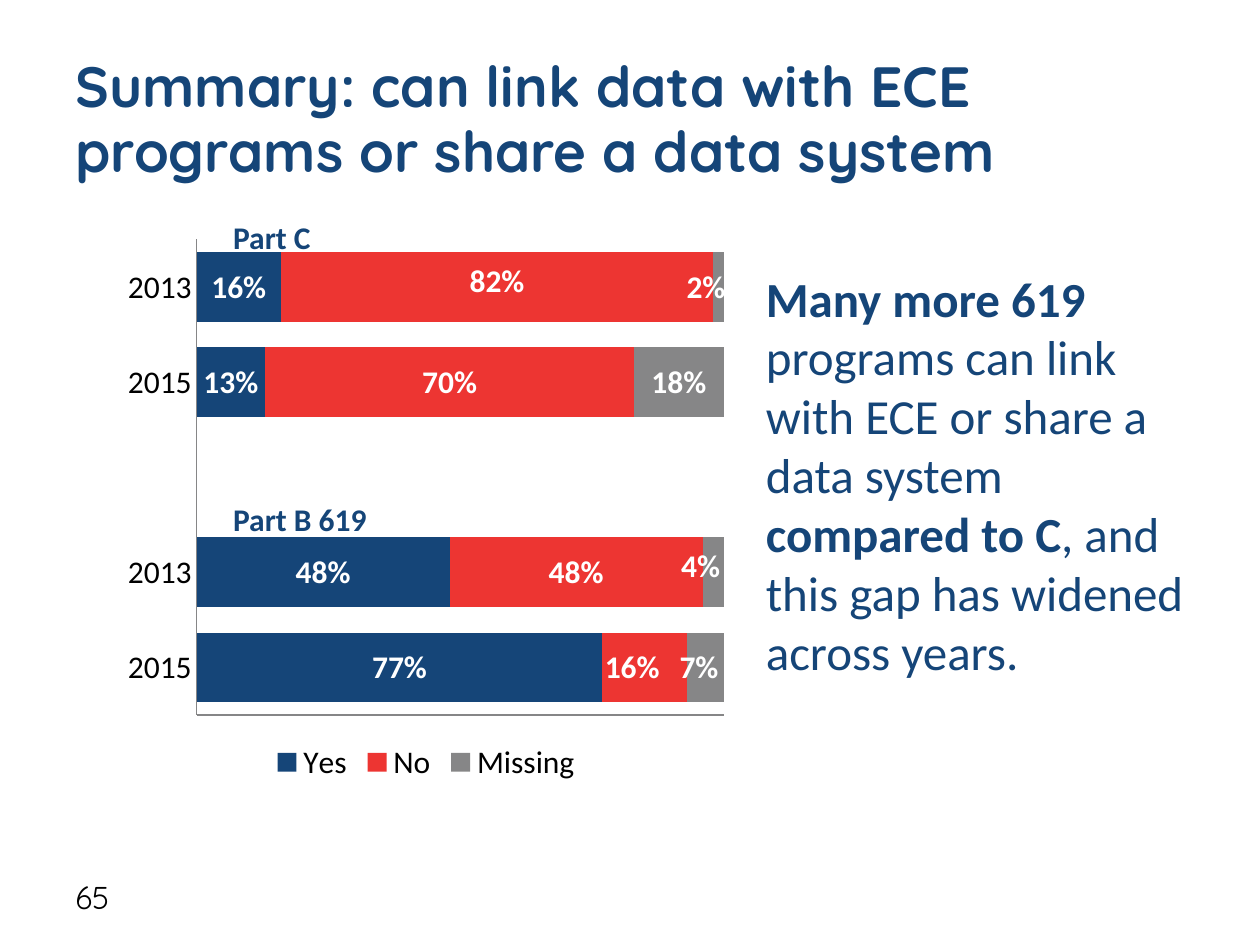
from pptx import Presentation
from pptx.chart.data import CategoryChartData
from pptx.dml.color import RGBColor
from pptx.enum.chart import XL_CHART_TYPE as ChartType, XL_LEGEND_POSITION as LegendPosition
from pptx.enum.chart import XL_TICK_LABEL_POSITION as TickLabels, XL_TICK_MARK as TickMark
from pptx.enum.text import MSO_ANCHOR as Anchor
from pptx.oxml import parse_xml
from pptx.oxml.ns import nsdecls
from pptx.util import Cm, Pt

NAVY = RGBColor(0x15, 0x45, 0x78)
RED = RGBColor(0xED, 0x35, 0x32)
GRAY = RGBColor(0x86, 0x86, 0x87)
WHITE = RGBColor(0xFF, 0xFF, 0xFF)
BLACK = RGBColor(0, 0, 0)


def add_text(box, runs, size, font_name="Calibri", color=NAVY, anchor=Anchor.TOP, wrap=True, spacing=None):
    shape = slide.shapes.add_textbox(*[Cm(length) for length in box])
    frame = shape.text_frame
    frame.word_wrap = wrap
    frame.vertical_anchor = anchor
    paragraph = frame.paragraphs[0]
    paragraph.line_spacing = spacing
    for text, bold in runs:
        run = paragraph.add_run()
        run.text = text
        run.font.name = font_name
        run.font.size = Pt(size)
        run.font.bold = bold
        run.font.color.rgb = color


def manual_layout(x, y, size=""):
    return parse_xml(
        f'<c:layout {nsdecls("c")}><c:manualLayout>{size and "<c:layoutTarget val=%sinner%s/>" % (chr(34), chr(34))}'
        f'{size and "<c:xMode val=%sedge%s/><c:yMode val=%sedge%s/>" % ((chr(34),) * 4)}'
        f'<c:x val="{x}"/><c:y val="{y}"/>{size}</c:manualLayout></c:layout>')


presentation = Presentation()
presentation.slide_width = Cm(25.4)
presentation.slide_height = Cm(19.05)
slide = presentation.slides.add_slide(presentation.slide_layouts[6])

add_text((1.27, 17.58, 5.92, 1.02), [("65", False)], 18, "Quicksand", BLACK, Anchor.MIDDLE)
add_text((1.27, 0.84, 22.86, 3.18), [("Summary: can link data with ECE programs or share a data system", True)],
         32.4, "Quicksand", anchor=Anchor.MIDDLE, spacing=0.95)
add_text((15.19, 5.28, 9.09, 8.64), [
    ("Many more 619 ", True),
    ("programs can link with ECE or share a data system ", False),
    ("compared to C", True),
    (", and this gap has widened across years.", False),
], 28)

chart_data = CategoryChartData(number_format="0%")
chart_data.categories = ["2015", "2013", "", "2015", "2013"]
chart_data.add_series("Yes", [0.77, 0.48, None, 0.13, 0.16])
chart_data.add_series("No", [0.16, 0.48, None, 0.7, 0.82])
chart_data.add_series("Missing", [0.07, 0.04, None, 0.18, 0.02])
chart = slide.shapes.add_chart(
    ChartType.BAR_STACKED, Cm(2.34), Cm(4.6), Cm(12.5), Cm(11.28), chart_data).chart
chart.has_title = False
chart.font.name = "Calibri"
chart.font.size = Pt(18)
chart.font.color.rgb = BLACK
chart.has_legend = True
chart.legend.position = LegendPosition.BOTTOM
chart.legend.include_in_layout = False

value_axis = chart.value_axis
value_axis.minimum_scale = 0
value_axis.maximum_scale = 1
value_axis.major_unit = 0.2
value_axis.has_major_gridlines = False
value_axis.tick_label_position = TickLabels.NONE
for axis in (chart.category_axis, value_axis):
    axis.major_tick_mark = TickMark.NONE
    axis.minor_tick_mark = TickMark.NONE
    axis.format.line.color.rgb = GRAY
    axis.format.line.width = Pt(0.75)

plot = chart.plots[0]
plot.gap_width = 37
plot.overlap = 100
plot.vary_by_categories = False
label_shifts = [{}, {0: (-0.02, 0), 4: (0, -0.01)}, {0: (-0.01, 0), 1: (-0.02, -0.01), 4: (-0.02, 0)}]
for series, color, shifts in zip(plot.series, (NAVY, RED, GRAY), label_shifts):
    series.format.fill.solid()
    series.format.fill.fore_color.rgb = color
    labels = series.data_labels
    labels.show_value = True
    labels.number_format = "0%"
    labels.number_format_is_linked = False
    fonts = [labels.font] + [series.points[index].data_label.font for index in shifts]
    for font in fonts:
        font.name = "Calibri"
        font.size = Pt(18)
        font.bold = True
        font.color.rgb = WHITE
    for label, shift in zip(series._element.xpath("c:dLbls/c:dLbl"), shifts.values()):
        label.insert(1, manual_layout(*shift))

plot_area = chart._chartSpace.chart.plotArea
for layout in plot_area.xpath("c:layout"):
    plot_area.remove(layout)
plot_area.insert(0, manual_layout(0.13, 0.02, '<c:w val="0.85"/><c:h val="0.85"/>'))

for title, top, width in (("Part C", 4.27, 2.16), ("Part B 619", 9.96, 3.61)):
    add_text((4.45, top, width, 1.02), [(title, True)], 18, wrap=False)

presentation.save("out.pptx")
